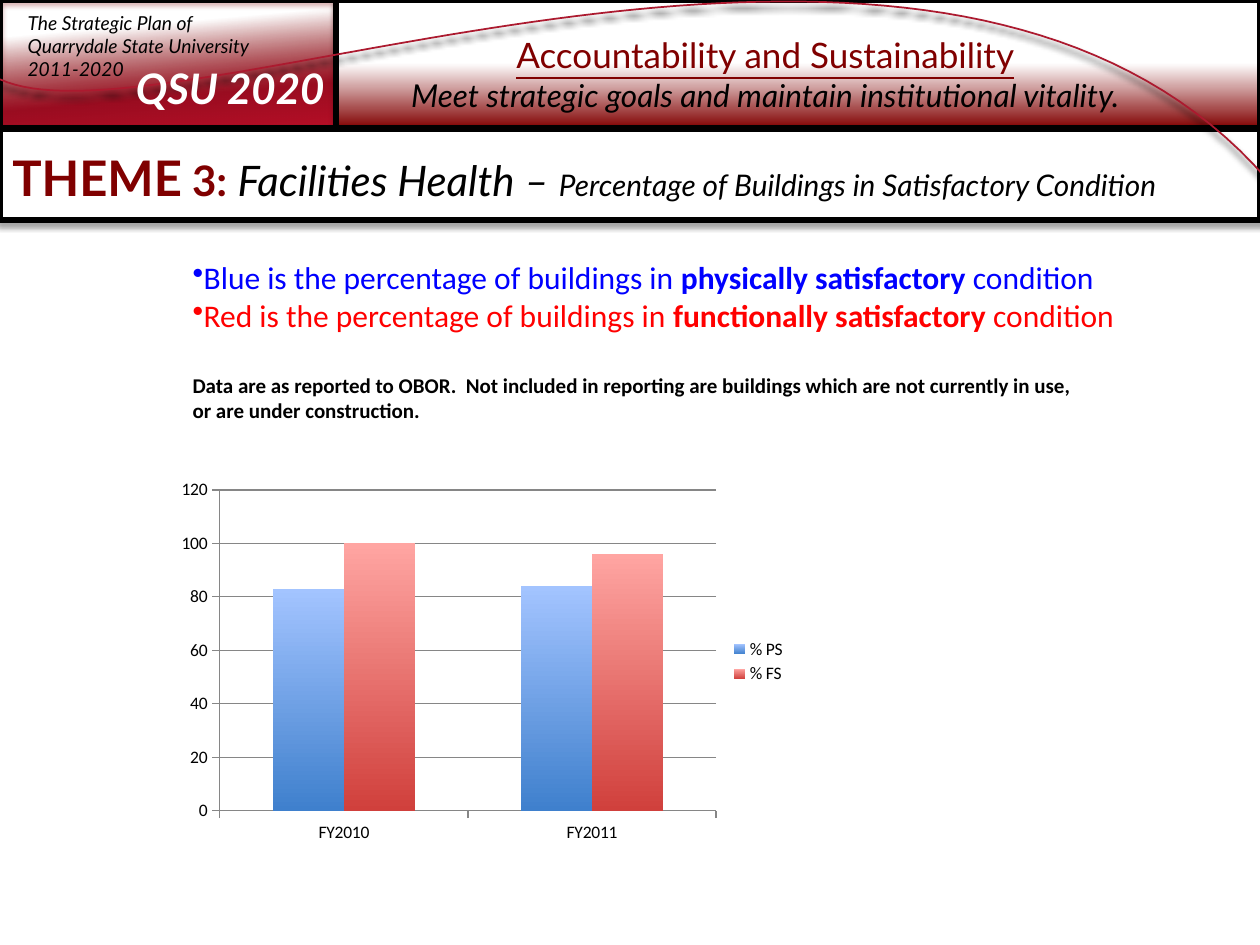
"""Build the facilities health slide with its banner, notes and column chart."""
from lxml import etree
from pptx import Presentation
from pptx.chart import data as cd
from pptx.dml import color
from pptx.enum import chart as ch, shapes, text
from pptx.oxml import ns, parse_xml
from pptx.util import Inches, Pt


def rgb(value):
    return color.RGBColor.from_string(value)


def add_text(s, box, paragraphs, font, wrap=True):
    tf = s.shapes.add_textbox(*map(Inches, box)).text_frame
    tf.word_wrap = wrap
    tf.auto_size = text.MSO_AUTO_SIZE.SHAPE_TO_FIT_TEXT
    for i, (align, bullet, before, runs) in enumerate(paragraphs):
        p = tf.paragraphs[0] if i == 0 else tf.add_paragraph()
        p.alignment = align
        p.space_before = Pt(before)
        if bullet:
            etree.SubElement(p._p.get_or_add_pPr(), ns.qn("a:buChar")).set("char", bullet)
        for words, size, fill, style in runs:
            r = p.add_run()
            r.text = words
            r.font.name = font
            r.font.size = Pt(size)
            r.font.color.rgb = rgb(fill)
            r.font.bold = "b" in style
            r.font.italic = "i" in style
            r.font.underline = "u" in style


MAROON, BLACK, WHITE, BLUE, RED = "800000", "000000", "FFFFFF", "0000FF", "FF0000"
LEFT, CENTER = text.PP_ALIGN.LEFT, text.PP_ALIGN.CENTER

prs = Presentation()
prs.slide_width, prs.slide_height = Inches(10), Inches(7.5)
s = prs.slides.add_slide(prs.slide_layouts[6])

panels = [
    ((0, 0, 2.67, 1.02), 85, [(24, MAROON, 0), (71, "9A0D21", 100), (100, "B70F27", 100)], MAROON),
    ((2.67, 0, 7.33, 1.02), 270, [(0, MAROON, 100), (51, WHITE, 100)], BLACK),
    ((0, 1.02, 10, 0.73), 0, [], BLACK),
]
shadowed = []
for box, angle, stops, shade in panels:
    sp = s.shapes.add_shape(shapes.MSO_SHAPE.RECTANGLE, *map(Inches, box))
    sp.line.color.rgb = rgb(BLACK)
    sp.line.width = Pt(3.5)
    sp.fill.solid()
    sp.fill.fore_color.rgb = rgb(WHITE)
    if stops:
        marks = "".join(
            f'<a:gs pos="{pos * 1000}"><a:srgbClr val="{c}"><a:alpha val="{a * 1000}"/></a:srgbClr></a:gs>'
            for pos, c, a in stops)
        solid = sp._element.spPr.find(ns.qn("a:solidFill"))
        solid.getparent().replace(solid, parse_xml(
            f'<a:gradFill {ns.nsdecls("a")} rotWithShape="1"><a:gsLst>{marks}</a:gsLst>'
            f'<a:lin ang="{angle * 60000}" scaled="0"/></a:gradFill>'))
    shadowed.append((sp, shade, 35, 3.1, 1.8))

curve = [(10.62, 2.28), (8.47, -2.07), (1.45, 1.3), (0, 0.63)]
steps = 80
points = []
for i in range(steps + 1):
    t = i / steps
    weights = ((1 - t) ** 3, 3 * t * (1 - t) ** 2, 3 * t * t * (1 - t), t ** 3)
    points.append(tuple(Inches(sum(w * xy[k] for w, xy in zip(weights, curve))) for k in (0, 1)))
builder = s.shapes.build_freeform(*points[0])
builder.add_line_segments(points[1:], close=False)
sp = builder.convert_to_shape()
sp.fill.background()
sp.line.color.rgb = rgb("AC1A2F")
sp.line.width = Pt(1)
shadowed.append((sp, BLACK, 90, 4, 3))

for sp, shade, alpha, blur, dist in shadowed:
    sp.shadow.inherit = False
    effects = sp._element.spPr.find(ns.qn("a:effectLst"))
    effects.append(parse_xml(
        f'<a:outerShdw {ns.nsdecls("a")} blurRad="{Pt(blur)}" dist="{Pt(dist)}" dir="5400000" rotWithShape="0">'
        f'<a:srgbClr val="{shade}"><a:alpha val="{alpha * 1000}"/></a:srgbClr></a:outerShdw>'))

plan = ["The Strategic Plan of", "Quarrydale State University", "2011-2020"]
add_text(s, (0.12, 0.04, 3.19, 0.66),
         [(LEFT, "", 0, [(line, 11, BLACK, "i")]) for line in plan], "Lato")
add_text(s, (2.41, 0.22, 7.33, 0.74), [
    (CENTER, "", 0, [("Accountability and Sustainability", 20, MAROON, "u")]),
    (CENTER, "", 0, [("Meet strategic goals and maintain institutional vitality.", 18, BLACK, "i")]),
], "Lato")
add_text(s, (0.98, 0.45, 1.74, 0.5), [(LEFT, "", 0, [("QSU 2020", 24, WHITE, "bi")])], "Lato")
add_text(s, (0, 1.12, 10, 0.57), [(LEFT, "", 0, [
    ("THEME", 28, MAROON, "b"),
    (" 3: ", 24, MAROON, "b"),
    ("Facilities Health – ", 24, BLACK, "i"),
    ("Percentage of Buildings in Satisfactory Condition", 17, BLACK, "i"),
])], "Lato")

data = cd.CategoryChartData()
data.categories = ["FY2010", "FY2011"]
data.add_series("% PS", (83, 84))
data.add_series("% FS", (100, 96))
chart = s.shapes.add_chart(ch.XL_CHART_TYPE.COLUMN_CLUSTERED, Inches(1.34), Inches(3.75),
                           Inches(5), Inches(3), data).chart
chart.has_title = False
chart.font.name = "Calibri"
chart.font.size = Pt(10)
chart.font.color.rgb = rgb(BLACK)
chart.has_legend = True
chart.legend.position = ch.XL_LEGEND_POSITION.RIGHT
chart.legend.include_in_layout = False
plot = chart.plots[0]
plot.vary_by_categories = False
plot.gap_width = 150
plot.overlap = 0
value_axis = chart.value_axis
value_axis.minimum_scale, value_axis.maximum_scale, value_axis.major_unit = 0, 120, 20
value_axis.has_major_gridlines = True
for line in (value_axis.format.line, chart.category_axis.format.line,
             value_axis.major_gridlines.format.line):
    line.color.rgb = rgb("868686")
    line.width = Pt(0.75)
for series, shades in zip(plot.series, (("3F80CD", "A3C4FF"), ("D0403C", "FFA5A2"))):
    fill = series.format.fill
    fill.gradient()
    fill.gradient_angle = 90
    for stop, shade in zip(fill.gradient_stops, shades):
        stop.color.rgb = rgb(shade)

notes = [
    (LEFT, "•", 0, [(f"{name} is the percentage of buildings in ", 18, c, ""),
                    (f"{kind} satisfactory ", 18, c, "b"),
                    ("condition", 18, c, "")])
    for name, kind, c in (("Blue", "physically", BLUE), ("Red", "functionally", RED))
]
notes += [
    (LEFT, "", 22, [("Data are as reported to OBOR.  Not included in reporting are buildings "
                     "which are not currently in use,", 12, BLACK, "b")]),
    (LEFT, "", 0, [("or are under construction.", 12, BLACK, "b")]),
]
add_text(s, (1.43, 2, 7.54, 1.72), notes, "Calibri", wrap=False)

prs.save("out.pptx")
